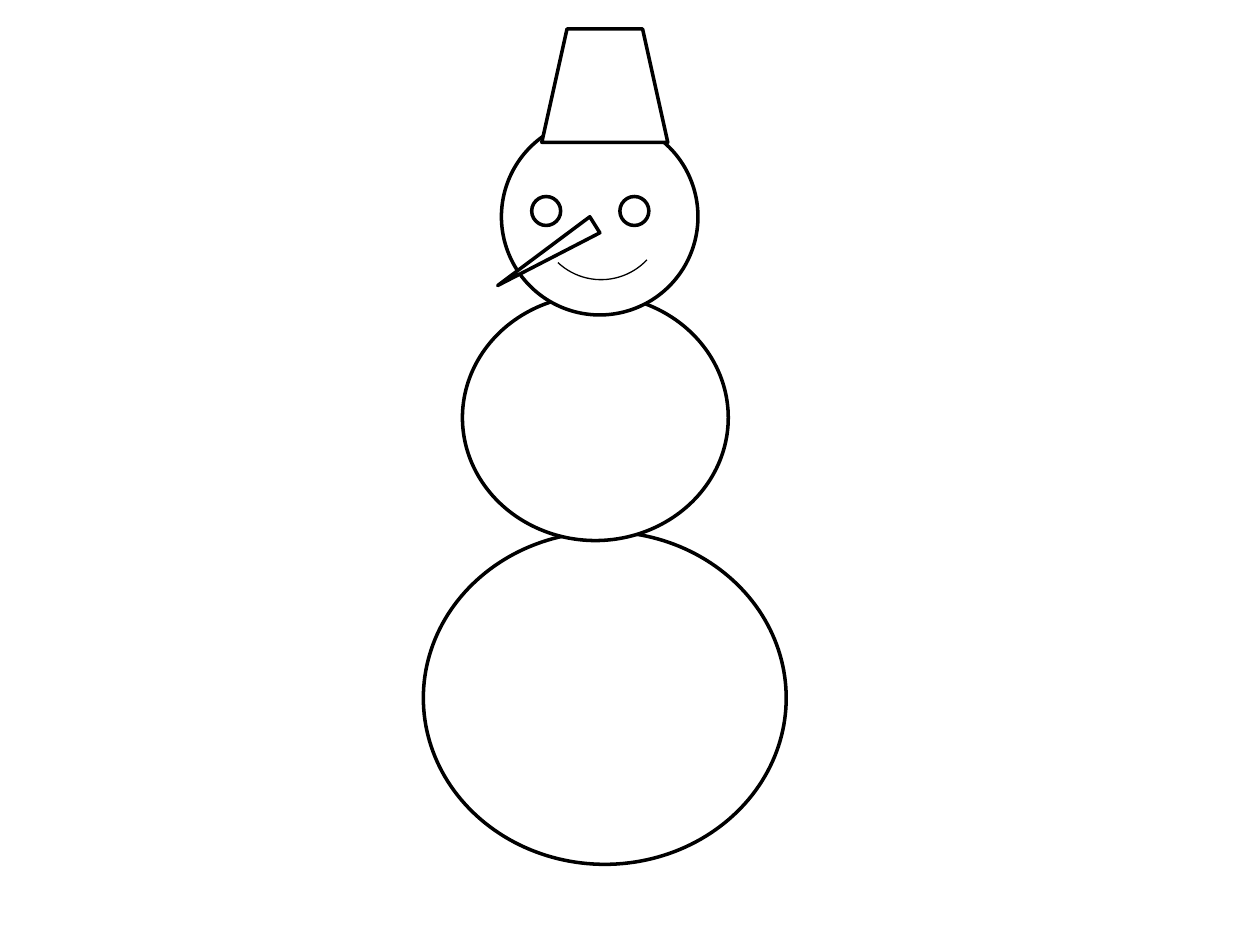
from pptx import Presentation
from pptx.dml.color import RGBColor
from pptx.enum.shapes import MSO_SHAPE
from pptx.util import Inches, Pt

THEME = {"ink": "000000", "snow": "FFFFFF", "bold": 2, "thin": 0.75}

BALLS = [
    (3.36, 4.22, 2.88, 2.64),
    (3.67, 2.34, 2.11, 1.95),
    (3.98, 0.94, 1.56, 1.56),
]
EYE = {"left": 4.22, "top": 1.56, "size": 0.23, "step": 0.7}
NOSE = (4.26, 1.57, 0.15, 0.91)
SMILE = (4.27, 1.22, 1, 1)
BUCKET = (4.3, 0.23, 1, 0.9)


def draw(slide, kind, box, turn=0, weight="bold", filled=True):
    shape = slide.shapes.add_shape(kind, *map(Inches, box))
    shape.shadow.inherit = False
    shape.rotation = turn
    if filled:
        shape.fill.solid()
        shape.fill.fore_color.rgb = RGBColor.from_string(THEME["snow"])
    else:
        shape.fill.background()
    shape.line.color.rgb = RGBColor.from_string(THEME["ink"])
    shape.line.width = Pt(THEME[weight])


def main():
    deck = Presentation()
    deck.slide_width, deck.slide_height = Inches(10), Inches(7.5)
    slide = deck.slides.add_slide(deck.slide_layouts[6])

    eyes = [
        (EYE["left"] + side * EYE["step"], EYE["top"], EYE["size"], EYE["size"])
        for side in range(2)
    ]
    for box in BALLS + eyes:
        draw(slide, MSO_SHAPE.OVAL, box)
    draw(slide, MSO_SHAPE.ISOSCELES_TRIANGLE, NOSE, turn=238)
    draw(slide, MSO_SHAPE.ARC, SMILE, turn=133.2, weight="thin", filled=False)
    draw(slide, MSO_SHAPE.FLOWCHART_MANUAL_OPERATION, BUCKET, turn=180)

    deck.save("out.pptx")


if __name__ == "__main__":
    main()
